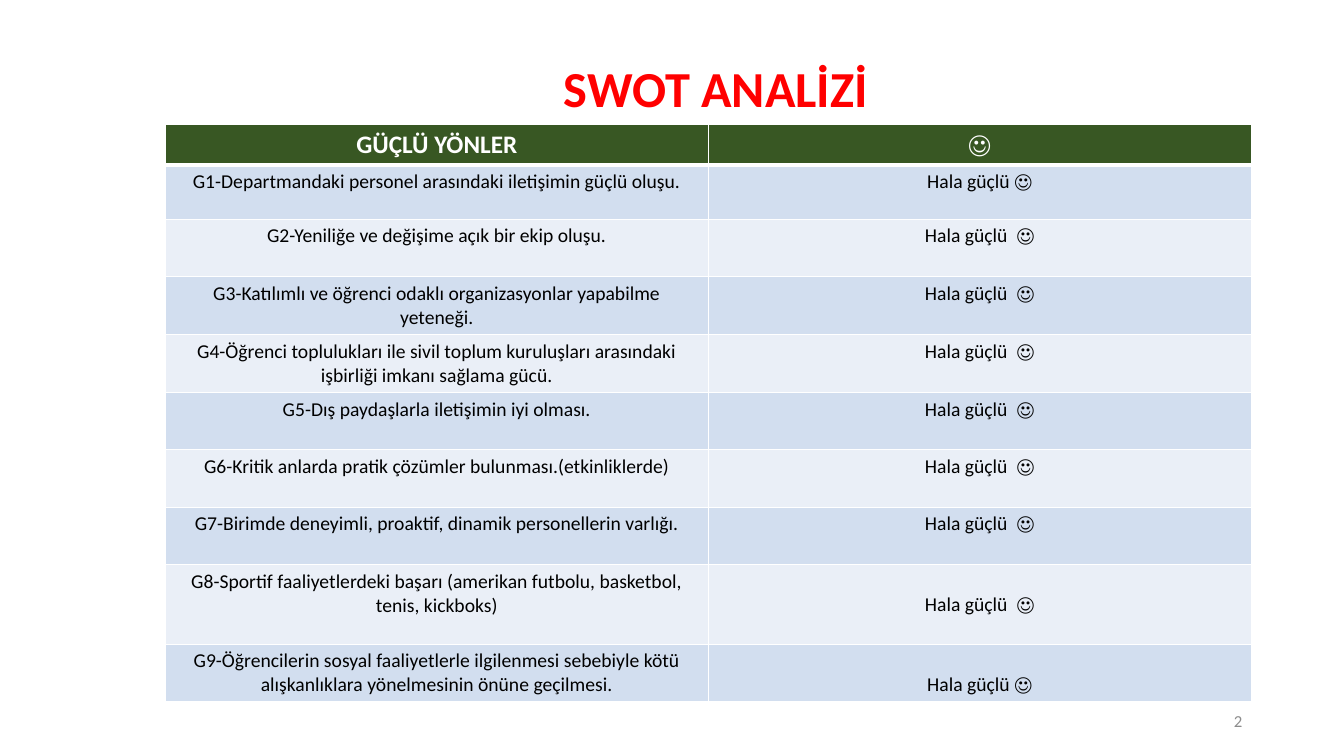
import pptx
import pptx.util
import pptx.oxml
import pptx.oxml.ns
import pptx.dml.color
import pptx.enum.text

Inches = pptx.util.Inches
Align = pptx.enum.text.PP_ALIGN
Anchor = pptx.enum.text.MSO_ANCHOR

COLORS = {
    "red": "FF0000",
    "green": "385723",
    "dark": "D2DEEF",
    "light": "EAEFF7",
    "white": "FFFFFF",
    "black": "000000",
    "gray": "8C8C8C",
}

STRONG = "Hala güçlü  ☺"
ROWS = [
    ("GÜÇLÜ YÖNLER", "☺", 0.39, Anchor.TOP),
    ("G1-Departmandaki personel arasındaki iletişimin güçlü oluşu.", "Hala güçlü ☺", 0.54, Anchor.TOP),
    ("G2-Yeniliğe ve değişime açık bir ekip oluşu.", STRONG, 0.57, Anchor.TOP),
    ("G3-Katılımlı ve öğrenci odaklı organizasyonlar yapabilme yeteneği.", STRONG, 0.57, Anchor.TOP),
    ("G4-Öğrenci toplulukları ile sivil toplum kuruluşları arasındaki işbirliği imkanı sağlama gücü.",
     STRONG, 0.57, Anchor.TOP),
    ("G5-Dış paydaşlarla iletişimin iyi olması.", STRONG, 0.57, Anchor.TOP),
    ("G6-Kritik anlarda pratik çözümler bulunması.(etkinliklerde)", STRONG, 0.57, Anchor.TOP),
    ("G7-Birimde deneyimli, proaktif, dinamik personellerin varlığı.", STRONG, 0.57, Anchor.TOP),
    ("G8-Sportif faaliyetlerdeki başarı (amerikan futbolu, basketbol, tenis, kickboks)",
     STRONG, 0.79, Anchor.MIDDLE),
    ("G9-Öğrencilerin sosyal faaliyetlerle ilgilenmesi sebebiyle kötü alışkanlıklara yönelmesinin önüne geçilmesi.",
     "Hala güçlü ☺", 0.57, Anchor.BOTTOM),
]


def color(name):
    return pptx.dml.color.RGBColor.from_string(COLORS[name])


def apply(item, values):
    for key, value in values.items():
        setattr(item, key, value)


class Deck:
    font = "Calibri"

    def __init__(self, show):
        self.slide = show.slides.add_slide(show.slide_layouts[5])

    def label(self, frame, text, size, tint, bold=False, align=Align.CENTER):
        frame.text = text
        line = frame.paragraphs[0]
        line.alignment = align
        apply(line.font, {"name": self.font, "size": pptx.util.Pt(size), "bold": bold})
        line.font.color.rgb = color(tint)

    def title(self, text, box):
        shape = self.slide.shapes.title
        apply(shape, dict(zip(("left", "top", "width", "height"), map(Inches, box))))
        apply(shape.text_frame, {"word_wrap": True, "vertical_anchor": Anchor.TOP,
                                 "auto_size": pptx.enum.text.MSO_AUTO_SIZE.NONE})
        self.label(shape.text_frame, text, 36, "red", True)

    def number(self, text, box):
        frame = self.slide.shapes.add_textbox(*map(Inches, box)).text_frame
        apply(frame, {"word_wrap": True, "vertical_anchor": Anchor.MIDDLE})
        self.label(frame, text, 12, "gray", align=Align.RIGHT)

    def border(self, cell, widths):
        props = cell._tc.get_or_add_tcPr()
        space = pptx.oxml.ns.nsdecls("a")
        for side, width in widths.items():
            props.append(pptx.oxml.parse_xml(
                f'<a:ln{side} {space} w="{pptx.util.Pt(width)}"><a:solidFill>'
                f'<a:srgbClr val="{COLORS["white"]}"/></a:solidFill></a:ln{side}>'))

    def table(self, rows, box):
        grid = self.slide.shapes.add_table(len(rows), 2, *map(Inches, box)).table
        for row, (*texts, height, anchor) in enumerate(rows):
            grid.rows[row].height = Inches(height)
            head = row == 0
            fill = "green" if head else ("light", "dark")[row % 2]
            style = (18, "white", True) if head else (14, "black", False)
            for col, text in enumerate(texts):
                cell = grid.cell(row, col)
                self.label(cell.text_frame, text, *style)
                if col == 1:
                    cell.vertical_anchor = anchor
                self.border(cell, {"L": 1, "R": 1, "T": 3 if row == 1 else 1, "B": 3 if head else 1})
                cell.fill.solid()
                cell.fill.fore_color.rgb = color(fill)


def main():
    show = pptx.Presentation()
    apply(show, {"slide_width": Inches(13.33), "slide_height": Inches(7.5)})
    deck = Deck(show)
    deck.title("SWOT ANALİZİ", (3.28, 0.52, 7.64, 0.71))
    deck.table(ROWS, (1.64, 1.23, 10.77, 5.71))
    deck.number("2", (9.42, 6.95, 3, 0.4))
    show.save("out.pptx")


if __name__ == "__main__":
    main()
